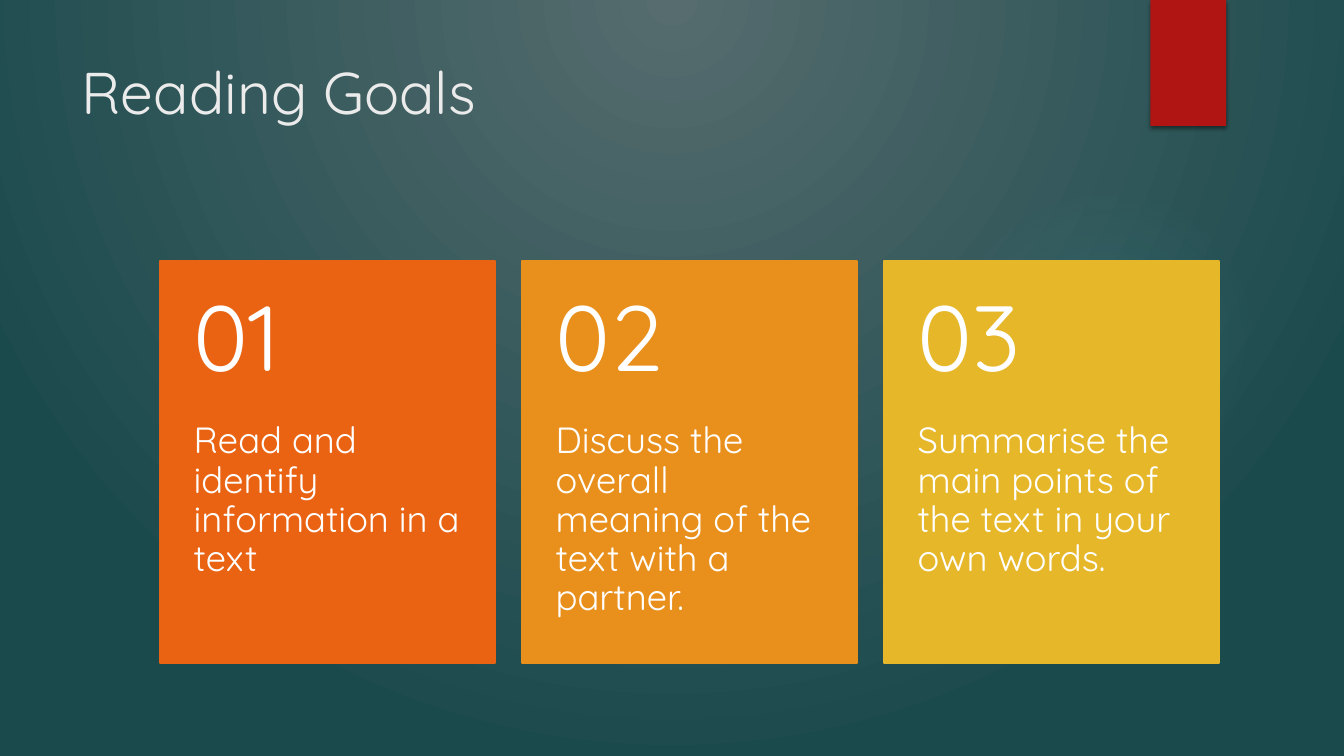
from dataclasses import dataclass

from lxml.etree import SubElement
from pptx import Presentation
from pptx.dml.color import RGBColor
from pptx.enum.shapes import MSO_SHAPE
from pptx.enum.text import MSO_ANCHOR, MSO_AUTO_SIZE, PP_ALIGN
from pptx.oxml.ns import qn
from pptx.util import Inches, Pt

FONT = "Quicksand"
COLORS = {
    "bg_center": "566C6E",
    "bg_edge": "1B4A4D",
    "glow": "50B9C1",
    "tab": "B01513",
    "shadow": "000000",
    "title": "EBEBEB",
    "text": "FFFFFF",
    "orange": "EA6312",
    "amber": "E9901C",
    "yellow": "E6B729",
}
SLIDE_W, SLIDE_H = Inches(13.33), Inches(7.5)
CARD_LEFT, CARD_TOP = 11.93, 34.53
CARD_W, CARD_H, CARD_PITCH = 24.9, 53.2, 26.93
NUMBER_H = 21.33


@dataclass(frozen=True)
class Box:
    left: float
    top: float
    width: float
    height: float

    def emu(self) -> tuple[int, int, int, int]:
        return across(self.left), down(self.top), across(self.width), down(self.height)


@dataclass(frozen=True)
class Stop:
    position: int
    color: str
    opacity: int = 100


@dataclass(frozen=True)
class Goal:
    color: str
    text: str


GOALS = [
    Goal("orange", "Read and identify information in a text"),
    Goal("amber", "Discuss the overall meaning of the text with a partner."),
    Goal("yellow", "Summarise the main points of the text in your own words."),
]


def across(percent: float) -> int:
    return round(SLIDE_W * percent / 100)


def down(percent: float) -> int:
    return round(SLIDE_H * percent / 100)


def rgb(name: str) -> RGBColor:
    return RGBColor.from_string(COLORS[name])


def add_color(parent, name: str, opacity: int) -> None:
    color = SubElement(parent, qn("a:srgbClr"), val=COLORS[name])
    if opacity < 100:
        SubElement(color, qn("a:alpha"), val=str(opacity * 1000))


def set_radial(fill, owner, stops: list[Stop], focus: dict[str, int]) -> None:
    fill.gradient()
    grad = next(owner.iter(qn("a:gradFill")))
    for child in list(grad):
        grad.remove(child)
    gs_list = SubElement(grad, qn("a:gsLst"))
    for stop in stops:
        gs = SubElement(gs_list, qn("a:gs"), pos=str(stop.position * 1000))
        add_color(gs, stop.color, stop.opacity)
    circle = SubElement(grad, qn("a:path"), path="circle")
    edges = {side: str(share * 1000) for side, share in focus.items()}
    SubElement(circle, qn("a:fillToRect"), **edges)


def add_block(shapes, kind: MSO_SHAPE, box: Box):
    sp = shapes.add_shape(kind, *box.emu())
    sp.shadow.inherit = False
    sp.line.fill.background()
    return sp


def add_run(p, text: str, size: int, color: str) -> None:
    r = p.add_run()
    r.text = text
    r.font.name = FONT
    r.font.size = Pt(size)
    r.font.color.rgb = rgb(color)


def add_label(shapes, box: Box, text: str, size: int, anchor: MSO_ANCHOR,
              inset_top: float, inset_bottom: float) -> None:
    tf = shapes.add_textbox(*box.emu()).text_frame
    tf.word_wrap = True
    tf.vertical_anchor = anchor
    tf.margin_left = tf.margin_right = across(2.48)
    tf.margin_top, tf.margin_bottom = down(inset_top), down(inset_bottom)
    p = tf.paragraphs[0]
    p.line_spacing = 0.9
    add_run(p, text, size, "text")


def add_backdrop(slide) -> None:
    set_radial(slide.background.fill, slide.element,
               [Stop(0, "bg_center"), Stop(100, "bg_edge")],
               {"l": 43, "t": 0, "r": 43, "b": 100})
    glow = add_block(slide.shapes, MSO_SHAPE.OVAL, Box(70.6, 24.4, 23.1, 41.07))
    set_radial(glow.fill, glow.element,
               [Stop(0, "glow", 7), Stop(36, "glow", 6), Stop(69, "glow", 0)],
               {"l": 50, "t": 50, "r": 50, "b": 50})
    tab = add_block(slide.shapes, MSO_SHAPE.RECTANGLE, Box(85.6, 0, 5.63, 16.67))
    tab.fill.solid()
    tab.fill.fore_color.rgb = rgb("tab")
    effects = next(tab.element.iter(qn("a:effectLst")))
    shadow = SubElement(effects, qn("a:outerShdw"), blurRad=str(Pt(3)),
                        dist=str(Pt(2)), dir=str(90 * 60000), rotWithShape="0")
    add_color(shadow, "shadow", 45)


def add_title(slide, text: str) -> None:
    sp = slide.shapes.title
    sp.left, sp.top, sp.width, sp.height = Box(5.33, 6.67, 77.2, 20.4).emu()
    tf = sp.text_frame
    tf.auto_size = MSO_AUTO_SIZE.NONE
    tf.vertical_anchor = MSO_ANCHOR.TOP
    p = tf.paragraphs[0]
    p.alignment = PP_ALIGN.LEFT
    add_run(p, text, 42, "title")


def add_card(shapes, index: int, goal: Goal) -> None:
    left = CARD_LEFT + index * CARD_PITCH
    card = add_block(shapes, MSO_SHAPE.RECTANGLE, Box(left, CARD_TOP, CARD_W, CARD_H))
    card.fill.solid()
    card.fill.fore_color.rgb = rgb(goal.color)
    card.line.color.rgb = rgb(goal.color)
    card.line.width = Pt(1.5)
    add_label(shapes, Box(left, CARD_TOP + NUMBER_H, CARD_W, CARD_H - NUMBER_H),
              goal.text, 26, MSO_ANCHOR.TOP, 0, 4.8)
    add_label(shapes, Box(left, CARD_TOP, CARD_W, NUMBER_H),
              f"{index + 1:02}", 66, MSO_ANCHOR.MIDDLE, 2.4, 2.4)


def main() -> None:
    prs = Presentation()
    prs.slide_width, prs.slide_height = SLIDE_W, SLIDE_H
    slide = prs.slides.add_slide(prs.slide_layouts[5])
    add_backdrop(slide)
    add_title(slide, "Reading Goals")
    cards = slide.shapes.add_group_shape()
    for index, goal in enumerate(GOALS):
        add_card(cards.shapes, index, goal)
    prs.save("out.pptx")


if __name__ == "__main__":
    main()
